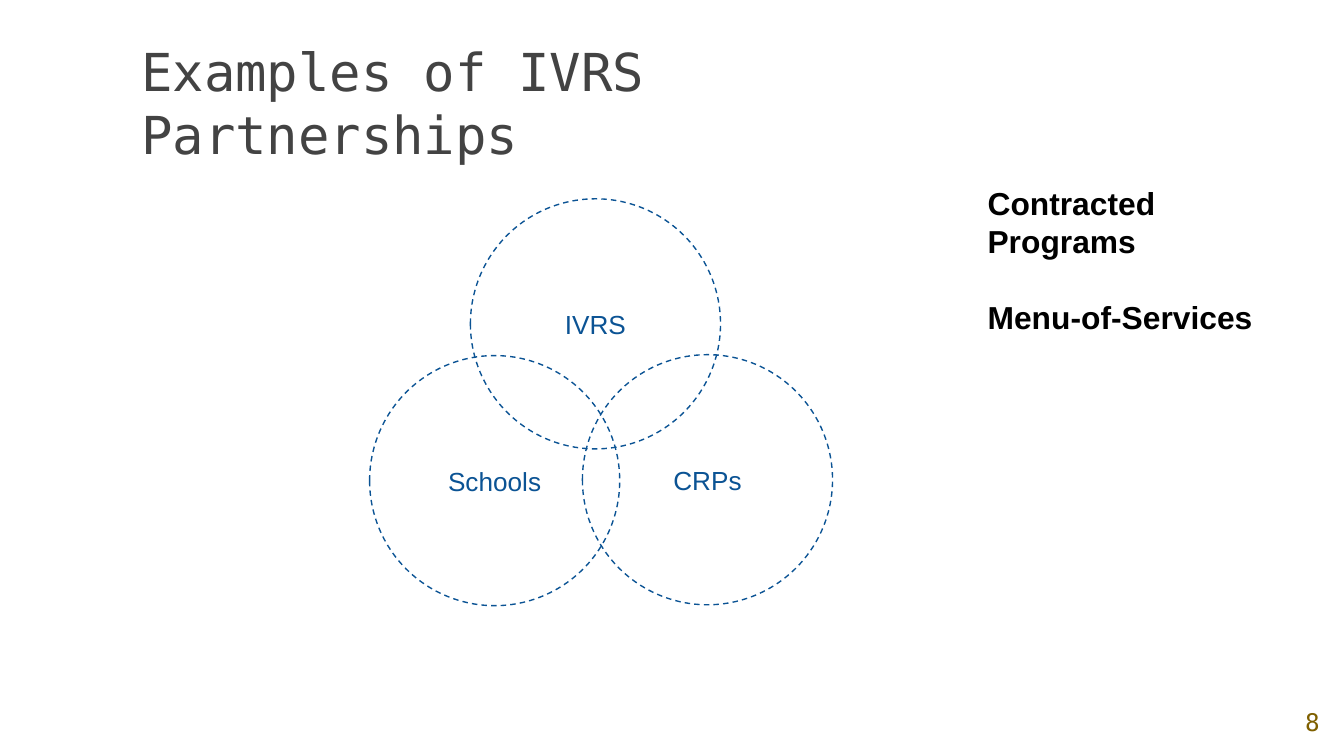
"""Build a slide with three overlapping partnership circles and two program notes."""
from typing import NamedTuple

from pptx import Presentation
from pptx.dml.color import RGBColor
from pptx.enum.dml import MSO_LINE
from pptx.enum.shapes import MSO_SHAPE
from pptx.enum.text import MSO_ANCHOR, MSO_AUTO_SIZE, PP_ALIGN
from pptx.util import Pt

TOP, MIDDLE, BOTTOM = MSO_ANCHOR.TOP, MSO_ANCHOR.MIDDLE, MSO_ANCHOR.BOTTOM
LEFT, CENTER = PP_ALIGN.LEFT, PP_ALIGN.CENTER
OVAL = MSO_SHAPE.OVAL
DASH = MSO_LINE.DASH
NO_FIT = MSO_AUTO_SIZE.NONE

BLUE = RGBColor(0x0B, 0x53, 0x94)
GRAY = RGBColor(0x43, 0x43, 0x43)
BLACK = RGBColor(0, 0, 0)
BROWN = RGBColor(0x7F, 0x60, 0x00)
SANS = "Arial"
MONO = "DejaVu Sans Mono"
DIAMETER = 134


class Partner(NamedTuple):
    name: str
    left: float
    top: float


PARTNERS = [
    Partner("IVRS", 252, 106.5),
    Partner("Schools", 198, 190.5),
    Partner("CRPs", 312, 190),
]


def write(frame, *lines: str, size: float, color: RGBColor, font: str = SANS,
          bold: bool = False, align=LEFT, anchor=TOP, inset: float = 7.2,
          gap: float = 0) -> None:
    """Fill a text frame with formatted paragraphs."""
    frame.word_wrap = True
    frame.auto_size = NO_FIT
    frame.vertical_anchor = anchor
    frame.margin_left = frame.margin_right = Pt(7.2)
    frame.margin_top = frame.margin_bottom = Pt(inset)
    for index, line in enumerate(lines):
        paragraph = frame.add_paragraph() if index else frame.paragraphs[0]
        paragraph.text = line
        paragraph.alignment = align
        paragraph.space_before = Pt(gap if index else 0)
        paragraph.font.name = font
        paragraph.font.size = Pt(size)
        paragraph.font.bold = bold
        paragraph.font.color.rgb = color


def draw_partner(shapes, partner: Partner) -> None:
    """Draw one dashed circle with its name."""
    circle = shapes.add_shape(OVAL, Pt(partner.left), Pt(partner.top),
                              Pt(DIAMETER), Pt(DIAMETER))
    circle.shadow.inherit = False
    circle.fill.background()
    circle.line.color.rgb = BLUE
    circle.line.width = Pt(0.75)
    circle.line.dash_style = DASH
    write(circle.text_frame, partner.name, size=14, color=BLUE,
          align=CENTER, anchor=MIDDLE)


def main() -> None:
    """Build and save the slide."""
    deck = Presentation()
    deck.slide_width, deck.slide_height = Pt(720), Pt(405)
    slide = deck.slides.add_slide(deck.slide_layouts[5])
    shapes = slide.shapes

    title = shapes.title
    title.left, title.top = Pt(68.5), Pt(28)
    title.width, title.height = Pt(443), Pt(67.5)
    write(title.text_frame, "Examples of IVRS Partnerships", size=28,
          color=GRAY, font=MONO, anchor=BOTTOM)

    for partner in PARTNERS:
        draw_partner(shapes, partner)

    page_number = shapes.add_textbox(Pt(686), Pt(368), Pt(34), Pt(37))
    write(page_number.text_frame, "8", size=13, color=BROWN, font=MONO,
          align=CENTER, anchor=MIDDLE)

    programs = shapes.add_textbox(Pt(522), Pt(95), Pt(180), Pt(69))
    write(programs.text_frame, "Contracted Programs", "Menu-of-Services",
          size=17, color=BLACK, bold=True, inset=3.6, gap=20)

    deck.save("out.pptx")


if __name__ == "__main__":
    main()
